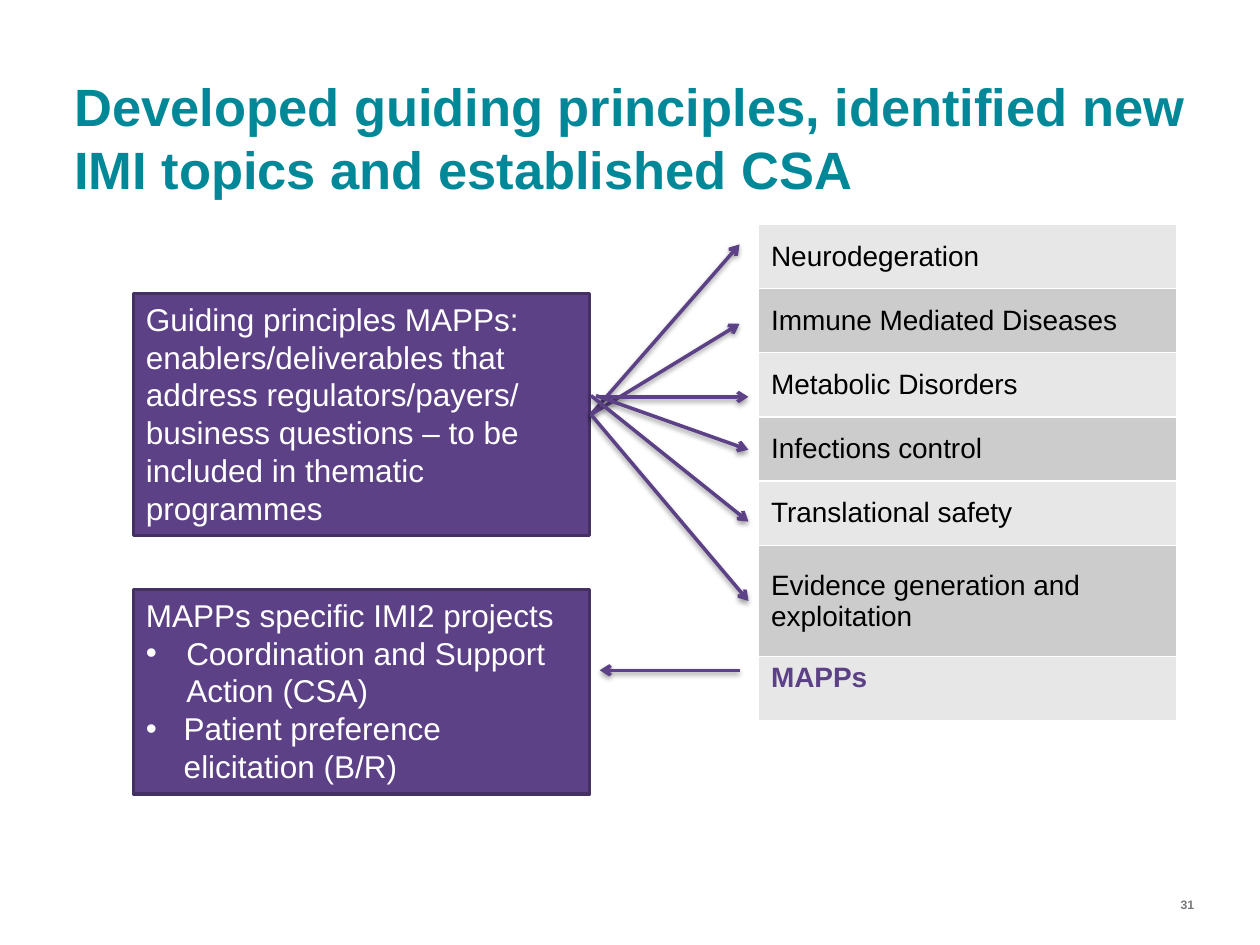
from lxml.etree import SubElement
from pptx import Presentation
from pptx.dml.color import RGBColor
from pptx.enum.shapes import MSO_CONNECTOR, MSO_SHAPE
from pptx.enum.text import MSO_ANCHOR, MSO_AUTO_SIZE, PP_ALIGN
from pptx.oxml.ns import qn
from pptx.util import Inches, Pt

TEAL, PURPLE, DARK_PURPLE = "008898", "5D4187", "453064"
WHITE, BLACK, GREY = "FFFFFF", "000000", "77787B"
BANDS = ("E7E7E7", "CCCCCC")

TITLE = "Developed guiding principles, identified new IMI topics and established CSA"
PAGE = "31"
TOPICS = [  # text, row height
    ("Neurodegeration", 0.51),
    ("Immune Mediated Diseases", 0.51),
    ("Metabolic Disorders", 0.51),
    ("Infections control", 0.51),
    ("Translational safety", 0.51),
    ("Evidence generation and exploitation", 0.88),
    ("MAPPs", 0.51),
]
BOXES = [  # top, height, paragraphs as (text, bullet indent)
    (2.33, 1.92, [
        ("Guiding principles MAPPs: enablers/deliverables that address regulators/payers/", 0),
        ("business questions – to be included in thematic programmes", 0),
    ]),
    (4.68, 1.62, [
        ("MAPPs specific IMI2 projects", 0),
        ("Coordination and Support Action (CSA)", 0.32),
        ("Patient preference elicitation (B/R)", 0.3),
    ]),
]
ARROWS = [  # start, end
    ((4.69, 3.29), (5.87, 1.94)),
    ((4.69, 3.29), (5.87, 2.57)),
    ((4.76, 3.15), (5.94, 3.15)),
    ((4.73, 3.14), (5.94, 3.57)),
    ((4.69, 3.14), (5.94, 4.14)),
    ((4.69, 3.29), (5.94, 4.77)),
    ((5.87, 5.32), (4.76, 5.32)),
]


def rgb(code):
    return RGBColor.from_string(code)


def set_font(p, size, color, bold=False):
    p.font.name = "Arial"
    p.font.size = Pt(size)
    p.font.bold = bold
    p.font.color.rgb = rgb(color)


def add_fill(parent, color):
    fill = SubElement(parent, qn("a:solidFill"))
    SubElement(fill, qn("a:srgbClr"), val=color)


def clear_margins(tf):
    tf.margin_left = tf.margin_right = tf.margin_top = tf.margin_bottom = 0


def add_title(slide):
    sp = slide.shapes.title
    sp.left, sp.top, sp.width, sp.height = map(Inches, (0.59, 0.59, 8.9, 1.35))
    tf = sp.text_frame
    clear_margins(tf)
    tf.auto_size = MSO_AUTO_SIZE.NONE
    tf.vertical_anchor = MSO_ANCHOR.TOP
    tf.text = TITLE
    p = tf.paragraphs[0]
    p.alignment = PP_ALIGN.LEFT
    p.line_spacing = Pt(36)
    set_font(p, 30, TEAL, True)


def add_page_number(slide):
    sp = slide.shapes.add_textbox(*map(Inches, (9.37, 7.12, 0.53, 0.25)))
    tf = sp.text_frame
    clear_margins(tf)
    tf.word_wrap = True
    tf.text = PAGE
    set_font(tf.paragraphs[0], 7, GREY, True)


def add_topics(slide):
    height = sum(h for _, h in TOPICS)
    frame = slide.shapes.add_table(len(TOPICS), 1, *map(Inches, (6.02, 1.78, 3.32, height)))
    table = frame.table
    table.first_row = table.horz_banding = False
    for i, (text, row_height) in enumerate(TOPICS):
        last = i == len(TOPICS) - 1
        table.rows[i].height = Inches(row_height)
        cell = table.cell(i, 0)
        cell.text = text
        cell.vertical_anchor = MSO_ANCHOR.TOP if last else MSO_ANCHOR.MIDDLE
        set_font(cell.text_frame.paragraphs[0], 16, PURPLE if last else BLACK, last)
        tc_pr = cell._tc.get_or_add_tcPr()
        for side in ("a:lnL", "a:lnR", "a:lnT", "a:lnB"):
            add_fill(SubElement(tc_pr, qn(side), w=str(Pt(1))), WHITE)
        cell.fill.solid()
        cell.fill.fore_color.rgb = rgb(BANDS[i % 2])


def add_box(slide, top, height, paragraphs):
    sp = slide.shapes.add_shape(MSO_SHAPE.RECTANGLE, *map(Inches, (1.06, top, 3.62, height)))
    sp.shadow.inherit = False
    sp.fill.solid()
    sp.fill.fore_color.rgb = rgb(PURPLE)
    sp.line.color.rgb = rgb(DARK_PURPLE)
    sp.line.width = Pt(2)
    tf = sp.text_frame
    tf.word_wrap = True
    tf.auto_size = MSO_AUTO_SIZE.SHAPE_TO_FIT_TEXT
    tf.vertical_anchor = MSO_ANCHOR.TOP
    for i, (text, indent) in enumerate(paragraphs):
        p = tf.add_paragraph() if i else tf.paragraphs[0]
        p.text = text
        p.alignment = PP_ALIGN.LEFT
        if indent:
            p_pr = p._p.get_or_add_pPr()
            p_pr.set("marL", str(Inches(indent)))
            p_pr.set("indent", str(-Inches(indent)))
            SubElement(p_pr, qn("a:buFont"), typeface="Arial")
            SubElement(p_pr, qn("a:buChar"), char="•")
        set_font(p, 18, WHITE)


def add_arrow(slide, start, end):
    line = slide.shapes.add_connector(MSO_CONNECTOR.STRAIGHT, *map(Inches, start + end))
    line.line.color.rgb = rgb(PURPLE)
    line.line.width = Pt(2)
    SubElement(line.line._get_or_add_ln(), qn("a:tailEnd"), type="arrow")
    effects = SubElement(line._element.spPr, qn("a:effectLst"))
    shadow = SubElement(effects, qn("a:outerShdw"), blurRad=str(Pt(3.1)), dist=str(Pt(1.6)),
                        dir="5400000", rotWithShape="0")
    color = SubElement(shadow, qn("a:srgbClr"), val=BLACK)
    SubElement(color, qn("a:alpha"), val="38000")


def main():
    prs = Presentation()
    prs.slide_width, prs.slide_height = Inches(10), Inches(7.5)
    slide = prs.slides.add_slide(prs.slide_layouts[5])
    add_title(slide)
    add_page_number(slide)
    add_topics(slide)
    for box in BOXES:
        add_box(slide, *box)
    for start, end in ARROWS:
        add_arrow(slide, start, end)
    prs.save("out.pptx")


if __name__ == "__main__":
    main()
